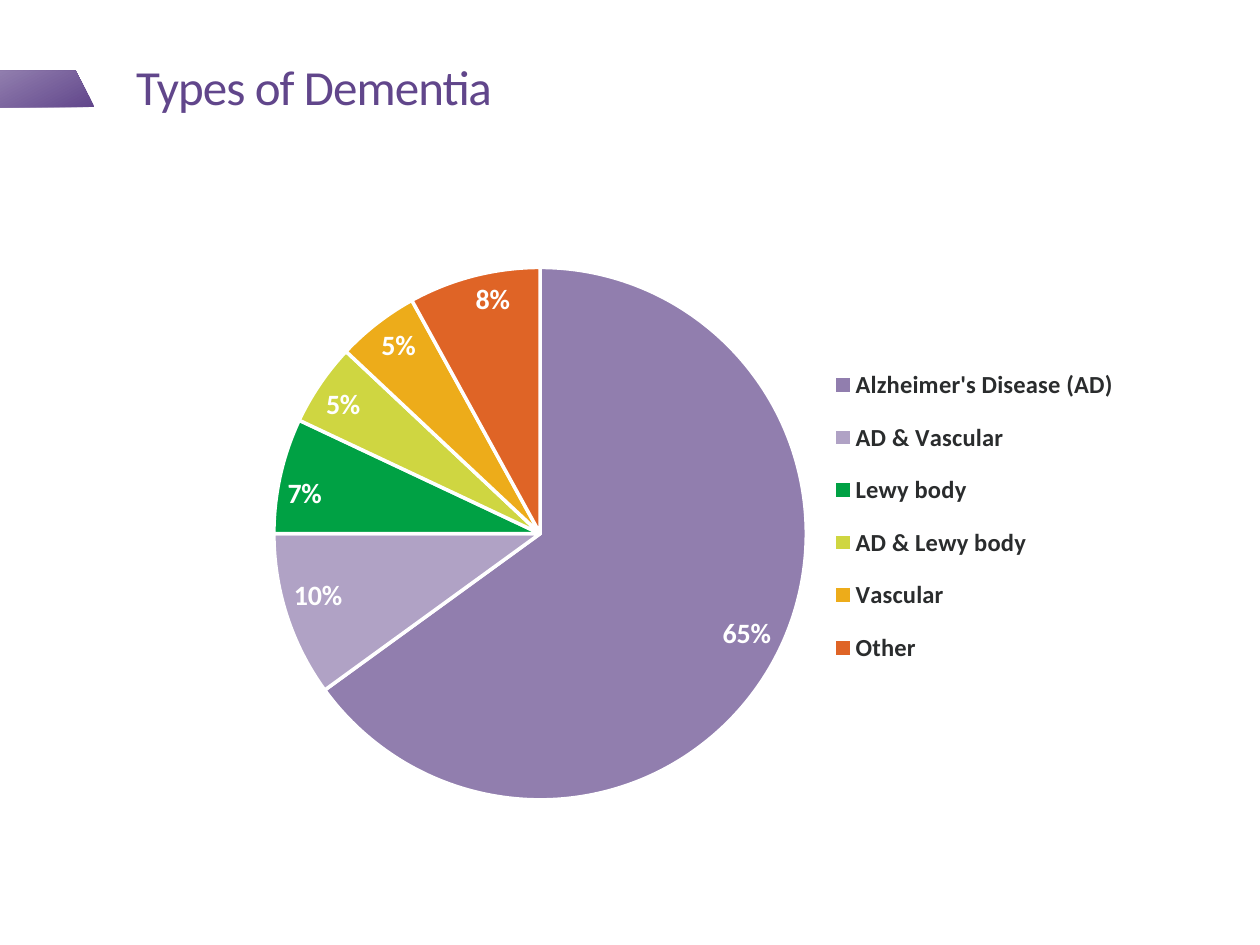
from lxml import etree
from pptx import Presentation
from pptx.chart.data import CategoryChartData
from pptx.dml.color import RGBColor
from pptx.enum.chart import XL_CHART_TYPE, XL_LABEL_POSITION, XL_LEGEND_POSITION
from pptx.enum.text import MSO_ANCHOR, PP_ALIGN
from pptx.oxml import parse_xml
from pptx.oxml.ns import nsdecls, qn
from pptx.util import Inches, Pt

# Content
TITLE = "Types of Dementia"
SLICES = [
    ("Alzheimer's Disease (AD)", 0.65, "917EAE"),
    ("AD & Vascular", 0.10, "B0A2C5"),
    ("Lewy body", 0.07, "00A144"),
    ("AD & Lewy body", 0.05, "CFD641"),
    ("Vascular", 0.05, "EDAC1A"),
    ("Other", 0.08, "DF6426"),
]
COLORS = {"purple": "61468B", "lilac": "917EAE", "white": "FFFFFF",
          "gray": "54585A", "legend": "2A2C2D"}
FONT = "Calibri"
BANNER = [(0, 0.56), (0.6, 0.56), (0.75, 0.85), (0, 0.85)]
# Fractions of the chart area: x, y, width, height
PLOT_BOX = (0.11, 0.083, 0.551, 0.831)
LEGEND_BOX = (0.68, 0.245, 0.31, 0.46)


def rgb(name):
    return RGBColor.from_string(COLORS[name])


def style_font(font, size, color, bold=False):
    font.name, font.size, font.bold = FONT, Pt(size), bold
    font.color.rgb = rgb(color)


def manual_layout(box, inner=False):
    target = '<c:layoutTarget val="inner"/>' if inner else ""
    modes = "".join(f'<c:{k}Mode val="edge"/>' for k in "xy")
    sizes = "".join(f'<c:{k} val="{v}"/>' for k, v in zip("xywh", box))
    return parse_xml(f'<c:layout {nsdecls("c")}><c:manualLayout>'
                     f'{target}{modes}{sizes}</c:manualLayout></c:layout>')


def set_layout(parent, layout, after=None):
    for old in parent.findall(qn("c:layout")):
        parent.remove(old)
    if after is None:
        parent.insert(0, layout)
    else:
        after.addnext(layout)


prs = Presentation()
prs.slide_width, prs.slide_height = Inches(10), Inches(7.5)
s = prs.slides.add_slide(prs.slide_layouts[5])

# Banner at the left edge
points = [(Inches(x), Inches(y)) for x, y in BANNER]
builder = s.shapes.build_freeform(*points[0])
builder.add_line_segments(points[1:], close=True)
sp = builder.convert_to_shape()
sp.shadow.inherit = False
sp.line.fill.background()
sp.fill.gradient()
sp.fill.gradient_angle = 118
for stop, name in zip(sp.fill.gradient_stops, ("purple", "lilac")):
    stop.color.rgb = rgb(name)

# Title
title = s.shapes.title
title.left, title.top = Inches(1.08), Inches(0.3)
title.width, title.height = Inches(6.92), Inches(0.67)
tf = title.text_frame
tf.word_wrap = True
tf.vertical_anchor = MSO_ANCHOR.BOTTOM
tf.margin_left = tf.margin_top = 0
tf.margin_right, tf.margin_bottom = Inches(0.1), Inches(0.05)
p = tf.paragraphs[0]
p.alignment, p.line_spacing = PP_ALIGN.LEFT, 0.85
r = p.add_run()
r.text = TITLE
style_font(r.font, 28, "purple")
r.font._element.set("spc", "-50")

# Pie chart
data = CategoryChartData(number_format="0%")
data.categories = [name for name, _, _ in SLICES]
data.add_series("Series 1", [value for _, value, _ in SLICES])
chart = s.shapes.add_chart(XL_CHART_TYPE.PIE, Inches(1.33), Inches(1.33),
                           Inches(7.67), Inches(5.83), data).chart
chart.has_title = False
style_font(chart.font, 10, "gray")
plot = chart.plots[0]
plot.vary_by_categories = True
for i, (_, _, color) in enumerate(SLICES):
    fmt = plot.series[0].points[i].format
    fmt.fill.solid()
    fmt.fill.fore_color.rgb = RGBColor.from_string(color)
    fmt.line.color.rgb = rgb("white")
    fmt.line.width = Pt(2)

# Slice labels
labels = plot.series[0].data_labels
labels.show_value = True
labels.number_format, labels.number_format_is_linked = "0%", False
labels.position = XL_LABEL_POSITION.INSIDE_END
style_font(labels.font, 16, "white", bold=True)

# Legend and fixed positions
chart.has_legend = True
legend = chart.legend
legend.position = XL_LEGEND_POSITION.RIGHT
legend.include_in_layout = False
style_font(legend.font, 14, "legend", bold=True)
set_layout(legend._element, manual_layout(LEGEND_BOX),
           after=legend._element.find(qn("c:legendPos")))
plot_area = chart._chartSpace.find(".//" + qn("c:plotArea"))
set_layout(plot_area, manual_layout(PLOT_BOX, inner=True))

prs.save("out.pptx")
